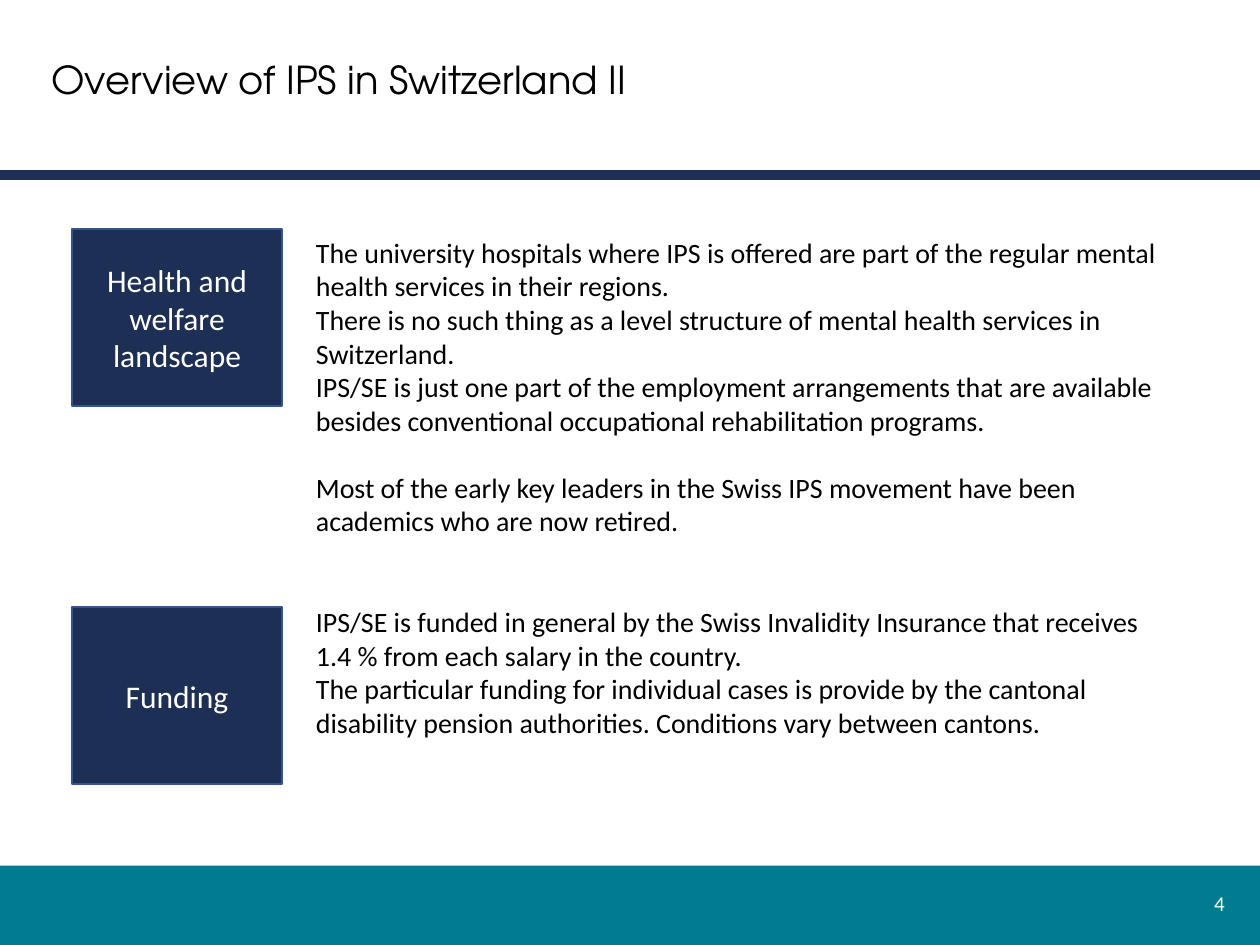
"""Build the slide on health landscape and funding of IPS in Switzerland."""
from pptx import Presentation
from pptx import util as u
from pptx.dml.color import RGBColor
from pptx.enum import shapes, text
from pptx.oxml.ns import qn
from lxml import etree

NAVY = RGBColor(0x1D, 0x2F, 0x54)
BLUE = RGBColor(0x32, 0x54, 0x91)
TEAL = RGBColor(0x00, 0x7B, 0x90)
WHITE = RGBColor(0xFF, 0xFF, 0xFF)
BLACK = RGBColor(0x00, 0x00, 0x00)
LEFT, MID, RIGHT = text.PP_ALIGN.LEFT, text.PP_ALIGN.CENTER, text.PP_ALIGN.RIGHT
TOP, CENTER = text.MSO_ANCHOR.TOP, text.MSO_ANCHOR.MIDDLE


def write(shape, lines, size=16, font="Calibri", color=BLACK, align=LEFT,
          anchor=CENTER, gaps={}, pitch=None):
    frame = shape.text_frame
    frame.word_wrap = True
    frame.vertical_anchor = anchor
    frame.text = "\n".join(lines)
    for index, para in enumerate(frame.paragraphs):
        para.alignment = align
        para.line_spacing = pitch
        if index in gaps:
            para.space_before = u.Pt(gaps[index])
        para.font.size = u.Pt(size)
        para.font.name = font
        para.font.color.rgb = color


def block(left, top, width, height, fill):
    shape = slide.shapes.add_shape(
        shapes.MSO_SHAPE.RECTANGLE, u.Cm(left), u.Cm(top), u.Cm(width), u.Cm(height))
    shape.shadow.inherit = False
    shape.fill.solid()
    shape.fill.fore_color.rgb = fill
    shape.line.fill.background()
    return shape


deck = Presentation()
deck.slide_width, deck.slide_height = u.Cm(25.4), u.Cm(19.05)
slide = deck.slides.add_slide(deck.slide_layouts[6])

block(0, 17.45, 25.4, 1.6, TEAL)
rule = slide.shapes.add_connector(
    shapes.MSO_CONNECTOR.STRAIGHT, u.Cm(0), u.Cm(3.53), u.Cm(25.4), u.Cm(3.53))
rule.line.color.rgb = NAVY
rule.line.width = u.Pt(6)
etree.SubElement(rule._element.spPr, qn("a:effectLst"))

title = slide.shapes.add_textbox(u.Cm(0.79), u.Cm(0.58), u.Cm(23.88), u.Cm(2.13))
write(title, ["Overview of IPS in Switzerland II"], size=22,
      font="TeX Gyre Adventor", pitch=0.9)

number = slide.shapes.add_textbox(u.Cm(23.85), u.Cm(17.7), u.Cm(1.09), u.Cm(1.02))
write(number, ["4"], size=12, color=WHITE, align=RIGHT)

for top, label in ((4.62, "Health and welfare landscape"), (12.24, "Funding")):
    card = block(1.45, top, 4.24, 3.56, NAVY)
    card.line.color.rgb = BLUE
    card.line.width = u.Pt(1)
    write(card, [label], size=18, color=WHITE, align=MID)

body = slide.shapes.add_textbox(u.Cm(6.12), u.Cm(4.62), u.Cm(17.55), u.Cm(3.56))
write(body, [
    "The university hospitals where IPS is offered are part of the regular mental "
    "health services in their regions.",
    "There is no such thing as a level structure of mental health services in Switzerland.",
    "IPS/SE is just one part of the employment arrangements that are available "
    "besides conventional occupational rehabilitation programs.",
    "Most of the early key leaders in the Swiss IPS movement have been academics "
    "who are now retired.",
    "IPS/SE is funded in general by the Swiss Invalidity Insurance that receives "
    "1.4 % from each salary in the country.",
    "The particular funding for individual cases is provide by the cantonal "
    "disability pension authorities. Conditions vary between cantons.",
], anchor=TOP, gaps={3: 19.2, 4: 38.4})

deck.save("out.pptx")
